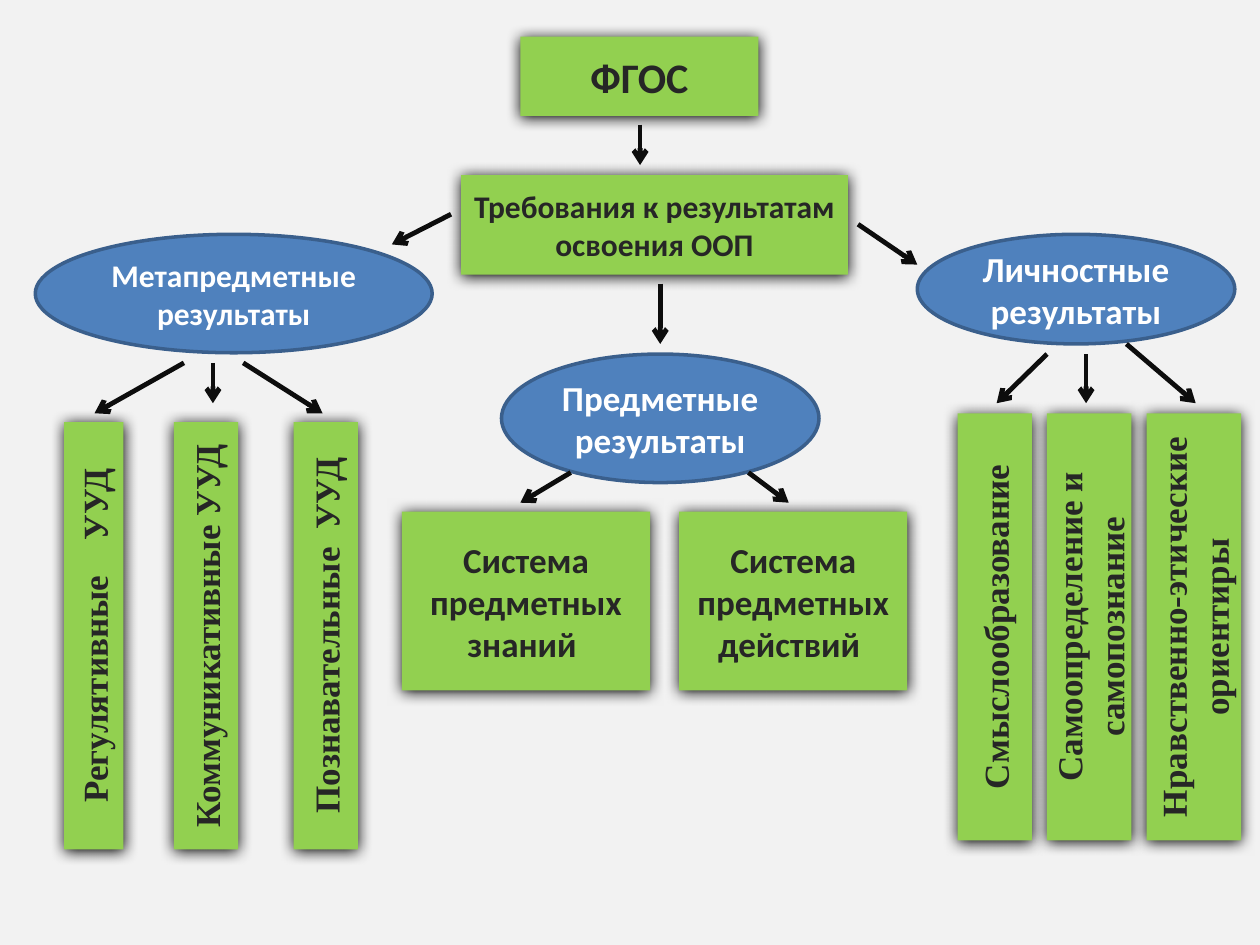
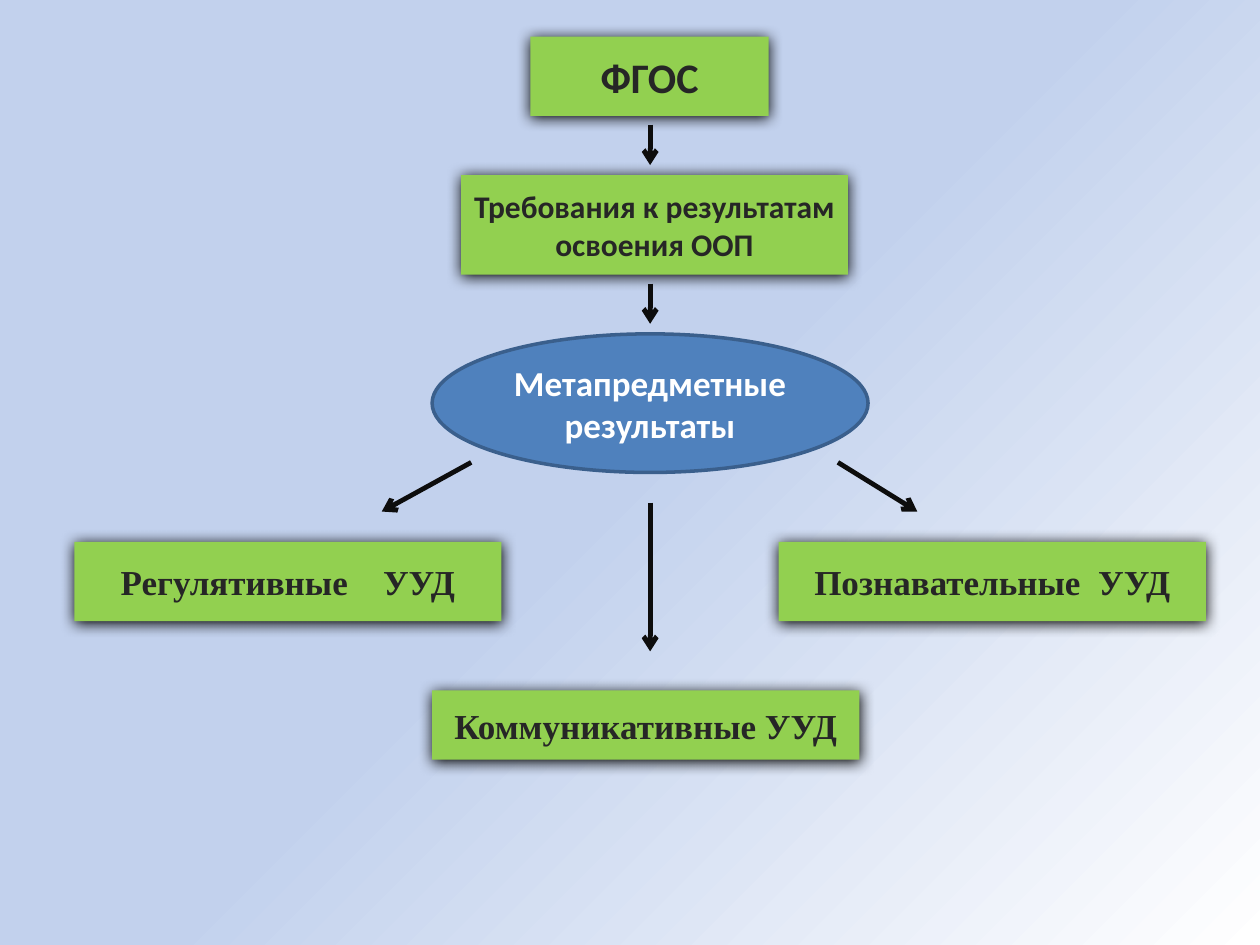
"""Build two slides that map the results required by the ФГОС standard."""
import pptx
import pptx.dml.color
import pptx.enum.shapes
import pptx.enum.text
import pptx.oxml
import pptx.oxml.ns
import pptx.util

NAMESPACE = pptx.oxml.ns.nsdecls("a")
SHADOW = (
    f'<a:effectLst {NAMESPACE}><a:outerShdw blurRad="107950" dist="12700" dir="5400000" rotWithShape="0">'
    '<a:srgbClr val="000000"/></a:outerShdw></a:effectLst>'
)
CORNER_GRADIENT = (
    f'<a:gradFill {NAMESPACE} rotWithShape="1"><a:gsLst>'
    '<a:gs pos="0"><a:srgbClr val="BFBFBF"/></a:gs>'
    '<a:gs pos="0"><a:srgbClr val="FFFFFF"/></a:gs>'
    '<a:gs pos="50000"><a:srgbClr val="C2D1ED"/></a:gs></a:gsLst>'
    '<a:path path="circle"><a:fillToRect l="100000" t="100000"/></a:path>'
    '<a:tileRect r="-100000" b="-100000"/></a:gradFill>'
)
SHAPE_TYPE = pptx.enum.shapes.MSO_SHAPE
STYLES = {
    "box": {"shape": SHAPE_TYPE.RECTANGLE, "fill": "92D050", "text": "262626", "font": "Calibri"},
    "skill": {"shape": SHAPE_TYPE.RECTANGLE, "fill": "92D050", "text": "262626", "font": "Times New Roman"},
    "result": {"shape": SHAPE_TYPE.OVAL, "fill": "4F81BD", "text": "FFFFFF", "font": "Calibri"},
}
OUTLINE, ARROW = "3A5F8C", "0D0D0D"
EXTRA_GAPS = {"Регулятивные УУД": 15, "Познавательные УУД": 5}
REQUIREMENTS = ("box", "Требования к результатам освоения ООП", 18, 36.6, 13.9, 30.7, 7.9)
STANDARD_ROW, STANDARD_WIDTH, STANDARD_HEIGHT = 2.9, 18.9, 6.3
COLUMN_HEIGHT = SKILL_WIDTH = 33.9

OVERVIEW = {
    "background": "F2F2F2",
    "boxes": [
        ("box", "ФГОС", 24, 41.3, STANDARD_ROW, STANDARD_WIDTH, STANDARD_HEIGHT),
        REQUIREMENTS,
        ("result", "Предметные результаты", 20, 39.8, 28.1, 25.2, 10.2),
        ("result", "Метапредметные результаты", 18, 2.8, 18.6, 31.5, 9.4),
        ("result", "Личностные результаты", 20, 72.8, 18.6, 25.2, 8.7),
        ("skill", "Регулятивные УУД", 20, 5.1, 33.5, 4.7, COLUMN_HEIGHT),
        ("skill", "Коммуникативные УУД", 20, 13.8, 33.5, 5.1, COLUMN_HEIGHT),
        ("skill", "Познавательные УУД", 20, 23.3, 33.5, 5.1, COLUMN_HEIGHT),
        ("box", "Система предметных знаний ", 20, 31.9, 40.6, 19.7, 14.2),
        ("box", "Система предметных действий ", 20, 53.9, 40.6, 18.1, 14.2),
        ("skill", "Смыслообразование", 20, 76, 32.8, 5.9, COLUMN_HEIGHT),
        ("skill", "Самоопределение и самопознание", 20, 83.1, 32.8, 6.7, COLUMN_HEIGHT),
        ("skill", "Нравственно-этические ориентиры", 20, 91, 32.8, 7.5, COLUMN_HEIGHT),
    ],
    "arrows": [
        (50.8, 9.9, 50.8, 13.1),
        (68.1, 17.8, 72.8, 21),
        (83.1, 28.1, 79.1, 32),
        (14.6, 28.8, 7.5, 32.8),
        (35.8, 17, 31.1, 19.4),
        (52.4, 22.5, 52.4, 27.3),
        (16.9, 28.8, 16.9, 32),
        (19.3, 28.8, 25.6, 32.8),
        (86.2, 28.1, 86.2, 32),
        (89.4, 27.3, 94.9, 32),
        (59.4, 37.5, 62.6, 39.9),
        (45.3, 37.5, 41.3, 39.9),
    ],
}
META_RESULTS = {
    "background": "C2D1ED",
    "gradient": CORNER_GRADIENT,
    "boxes": [
        ("box", "ФГОС", 24, 42.1, STANDARD_ROW, STANDARD_WIDTH, STANDARD_HEIGHT),
        REQUIREMENTS,
        ("result", "Метапредметные результаты", 20, 34.3, 26.5, 34.6, 11),
        ("skill", "Регулятивные УУД", 20, 5.9, 43, SKILL_WIDTH, 6.3),
        ("skill", "Коммуникативные УУД", 20, 34.3, 54.8, SKILL_WIDTH, 5.5),
        ("skill", "Познавательные УУД", 20, 61.8, 43, SKILL_WIDTH, 6.3),
    ],
    "arrows": [
        (51.6, 9.9, 51.6, 13.1),
        (37.4, 36.7, 30.3, 40.6),
        (51.6, 22.5, 51.6, 25.7),
        (51.6, 39.9, 51.6, 51.7),
        (66.5, 36.7, 72.8, 40.6),
    ],
}


def color(hex_value):
    return pptx.dml.color.RGBColor.from_string(hex_value)


presentation = pptx.Presentation()
presentation.slide_width = pptx.util.Inches(10)
presentation.slide_height = pptx.util.Inches(7.5)


def grid(cells):
    """Turn cells of a 100 by 75 grid into a length."""
    return round(cells * presentation.slide_width / 100)


for content in (OVERVIEW, META_RESULTS):
    slide = presentation.slides.add_slide(presentation.slide_layouts[6])
    background = slide.background.fill
    background.solid()
    background.fore_color.rgb = color(content["background"])
    if "gradient" in content:
        solid_fill = slide.element.find(".//" + pptx.oxml.ns.qn("a:solidFill"))
        solid_fill.getparent().replace(solid_fill, pptx.oxml.parse_xml(content["gradient"]))

    for style_name, text, size, column, row, width, height in content["boxes"]:
        style = STYLES[style_name]
        upright = height > width
        if upright:
            column, row = column + (width - height) / 2, row + (height - width) / 2
            width, height = height, width
        shape = slide.shapes.add_shape(style["shape"], grid(column), grid(row), grid(width), grid(height))
        shape.rotation = 270 if upright else 0
        shape.shadow.inherit = False
        shape.fill.solid()
        shape.fill.fore_color.rgb = color(style["fill"])
        if style_name == "result":
            shape.line.color.rgb = color(OUTLINE)
            shape.line.width = pptx.util.Pt(2)
        else:
            shape.line.fill.background()
            properties = shape.element.spPr
            properties.replace(properties.find(pptx.oxml.ns.qn("a:effectLst")), pptx.oxml.parse_xml(SHADOW))

        frame = shape.text_frame
        frame.word_wrap = True
        frame.vertical_anchor = pptx.enum.text.MSO_ANCHOR.MIDDLE
        paragraph = frame.paragraphs[0]
        paragraph.alignment = pptx.enum.text.PP_ALIGN.CENTER
        pieces = text.rpartition(" ") if text in EXTRA_GAPS else [text]
        for piece in pieces:
            run = paragraph.add_run()
            run.text = piece
            font_values = {"name": style["font"], "size": pptx.util.Pt(size), "bold": True}
            for attribute, value in font_values.items():
                setattr(run.font, attribute, value)
            run.font.color.rgb = color(style["text"])
            if piece == " ":
                run.font._element.set("spc", str(EXTRA_GAPS[text] * 100))

    for ends in content["arrows"]:
        arrow = slide.shapes.add_connector(pptx.enum.shapes.MSO_CONNECTOR.STRAIGHT, *map(grid, ends))
        arrow.line.color.rgb = color(ARROW)
        arrow.line.width = pptx.util.Pt(2.75)
        arrow.line._get_or_add_ln().append(pptx.oxml.parse_xml(f'<a:tailEnd {NAMESPACE} type="arrow"/>'))
        arrow.element.spPr.append(pptx.oxml.parse_xml(f"<a:effectLst {NAMESPACE}/>"))

presentation.save("out.pptx")
